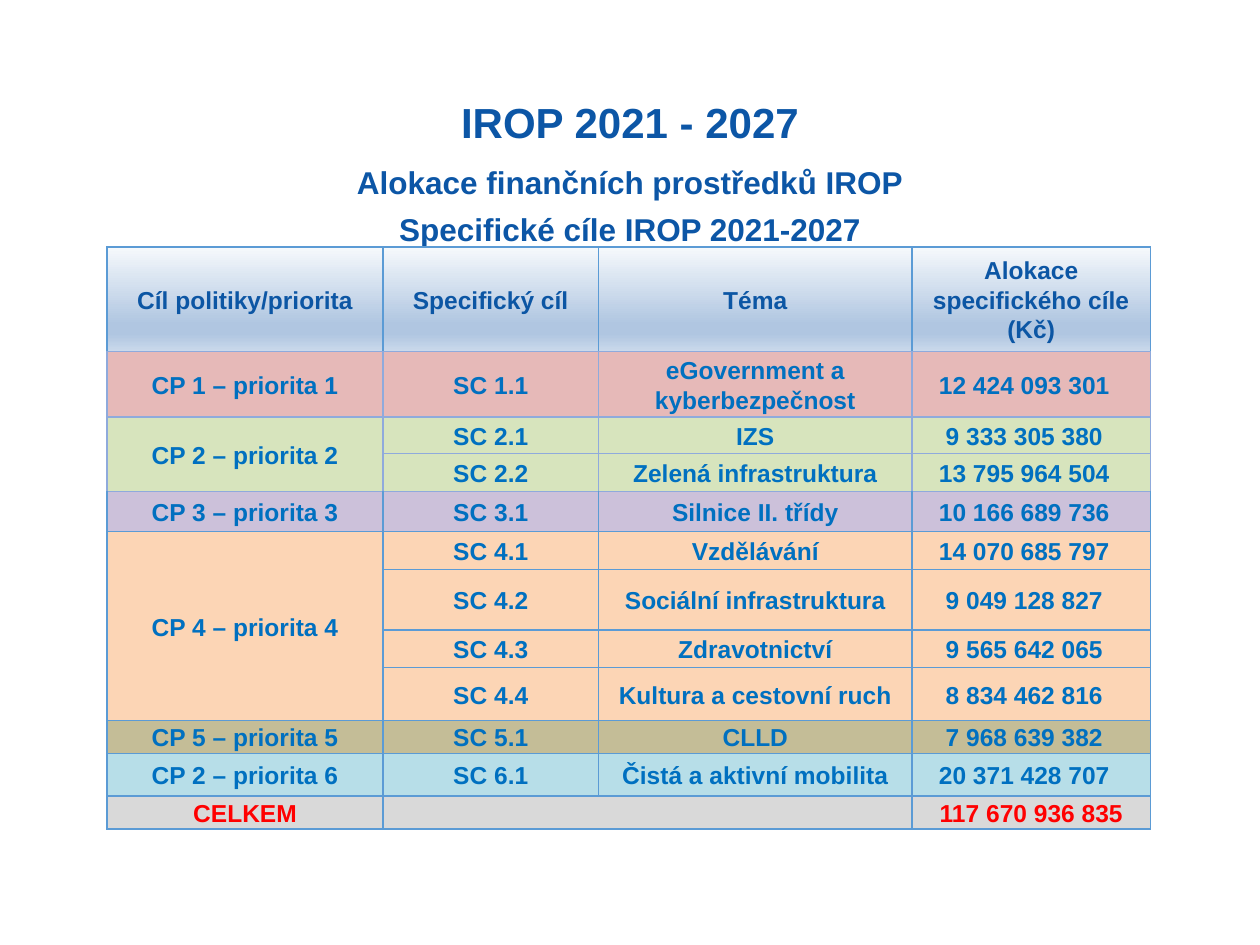
from lxml import etree
from pptx import Presentation
from pptx.dml.color import RGBColor
from pptx.enum import text
from pptx.oxml import ns
from pptx.util import Inches, Pt

BLUE, PALE = "5B9BD5", "8FAADC"
TITLE, HEAD, BODY, RED = "0C56A6", "0C56A4", "0070C0", "FF0000"


def style(p, size, color, spacing):
    p.alignment = text.PP_ALIGN.CENTER
    p.line_spacing = spacing
    p.font.name = "Arial"
    p.font.size = Pt(size)
    p.font.bold = True
    p.font.color.rgb = RGBColor.from_string(color)


def add_xml(parent, tag, **attrs):
    return etree.SubElement(parent, ns.qn(tag), **attrs)


prs = Presentation()
prs.slide_width, prs.slide_height = Inches(10), Inches(7.5)
slide = prs.slides.add_slide(prs.slide_layouts[1])

# Title
sp = slide.shapes.title
sp.left, sp.top, sp.width, sp.height = map(Inches, (0.85, 0.3, 8.3, 0.92))
tf = sp.text_frame
tf.vertical_anchor = text.MSO_ANCHOR.BOTTOM
tf.text = "IROP 2021 - 2027"
style(tf.paragraphs[0], 24, TITLE, 1.0)

# Subtitle lines
sp = slide.placeholders[1]
sp.left, sp.top, sp.width, sp.height = map(Inches, (0.32, 1.18, 8.97, 1.52))
tf = sp.text_frame
tf.text = "Alokace finančních prostředků IROP\nSpecifické cíle IROP 2021-2027"
for i, p in enumerate(tf.paragraphs):
    pPr = p._p.get_or_add_pPr()
    pPr.set("marL", "0")
    pPr.set("indent", str(Inches(0.39)))
    add_xml(pPr, "a:buNone")
    style(p, 18, TITLE, 1.2)
    p.space_before = Pt(1.5 * i)

# Table content: fill, then the four cells of the row
rows = [
    (0.83, None, "Cíl politiky/priorita", "Specifický cíl", "Téma", "Alokace specifického cíle (Kč)"),
    (0.52, "E6B9B8", "CP 1 – priorita 1", "SC 1.1", "eGovernment a kyberbezpečnost", "12 424 093 301"),
    (0.29, "D7E4BD", "CP 2 – priorita 2", "SC 2.1", "IZS", "9 333 305 380"),
    (0.3, "D7E4BD", "", "SC 2.2", "Zelená infrastruktura", "13 795 964 504"),
    (0.32, "CCC1DA", "CP 3 – priorita 3", "SC 3.1", "Silnice II. třídy", "10 166 689 736"),
    (0.3, "FCD5B5", "CP 4 – priorita 4", "SC 4.1", "Vzdělávání", "14 070 685 797"),
    (0.48, "FCD5B5", "", "SC 4.2", "Sociální infrastruktura", "9 049 128 827"),
    (0.3, "FCD5B5", "", "SC 4.3", "Zdravotnictví", "9 565 642 065"),
    (0.42, "FCD5B5", "", "SC 4.4", "Kultura a cestovní ruch", "8 834 462 816"),
    (0.26, "C4BD97", "CP 5 – priorita 5", "SC 5.1", "CLLD", "7 968 639 382"),
    (0.34, "B7DEE8", "CP 2 – priorita 6", "SC 6.1", "Čistá a aktivní mobilita", "20 371 428 707"),
    (0.26, "D9D9D9", "CELKEM", "", "", "117 670 936 835"),
]
widths = [2.19, 1.71, 2.49, 1.89]
gradient = [(0, "F6F9FC"), (74, "B0C6E1"), (83, "B0C6E1"), (100, "CAD9EB")]
last = len(rows) - 1

table = slide.shapes.add_table(
    len(rows), len(widths), Inches(0.85), Inches(1.96),
    Inches(sum(widths)), Inches(sum(row[0] for row in rows))).table
table.first_row = table.horz_banding = False
for col, width in zip(table.columns, widths):
    col.width = Inches(width)

# Merged cells: CP 2, CP 4 and the gap in the total row
for r1, c1, r2, c2 in [(2, 0, 3, 0), (5, 0, 8, 0), (last, 1, last, 2)]:
    table.cell(r1, c1).merge(table.cell(r2, c2))

for i, (height, fill, *labels) in enumerate(rows):
    table.rows[i].height = Inches(height)
    color = HEAD if i == 0 else RED if i == last else BODY
    for j, label in enumerate(labels):
        cell = table.cell(i, j)
        cell.vertical_anchor = text.MSO_ANCHOR.MIDDLE
        cell.margin_left = cell.margin_top = Inches(0.01)
        cell.margin_bottom = 0
        is_amount = j == 3 and 0 < i < last
        cell.margin_right = Inches(0.12 if is_amount else 0.01)
        p = cell.text_frame.paragraphs[0]
        if label:
            p.text = label
        else:
            p._p.get_or_add_endParaRPr().set("sz", "1400")
        style(p, 14, color, 1.07)

        # Borders: paler around the first two priorities
        tcPr = cell._tc.get_or_add_tcPr()
        side = PALE if 1 <= i <= 3 else BLUE
        edges = {"L": side, "R": side,
                 "T": PALE if 1 <= i <= 4 else BLUE,
                 "B": PALE if i <= 3 else BLUE}
        for edge, line in edges.items():
            ln = add_xml(tcPr, f"a:ln{edge}", w=str(Pt(1)))
            add_xml(add_xml(ln, "a:solidFill"), "a:srgbClr", val=line)

        # Fill: gradient header, plain rows
        if fill:
            cell.fill.solid()
            cell.fill.fore_color.rgb = RGBColor.from_string(fill)
        else:
            grad = add_xml(tcPr, "a:gradFill", rotWithShape="1")
            stops = add_xml(grad, "a:gsLst")
            for pos, stop in gradient:
                gs = add_xml(stops, "a:gs", pos=str(pos * 1000))
                add_xml(gs, "a:srgbClr", val=stop)
            add_xml(grad, "a:lin", ang="5400000", scaled="0")

prs.save("out.pptx")
